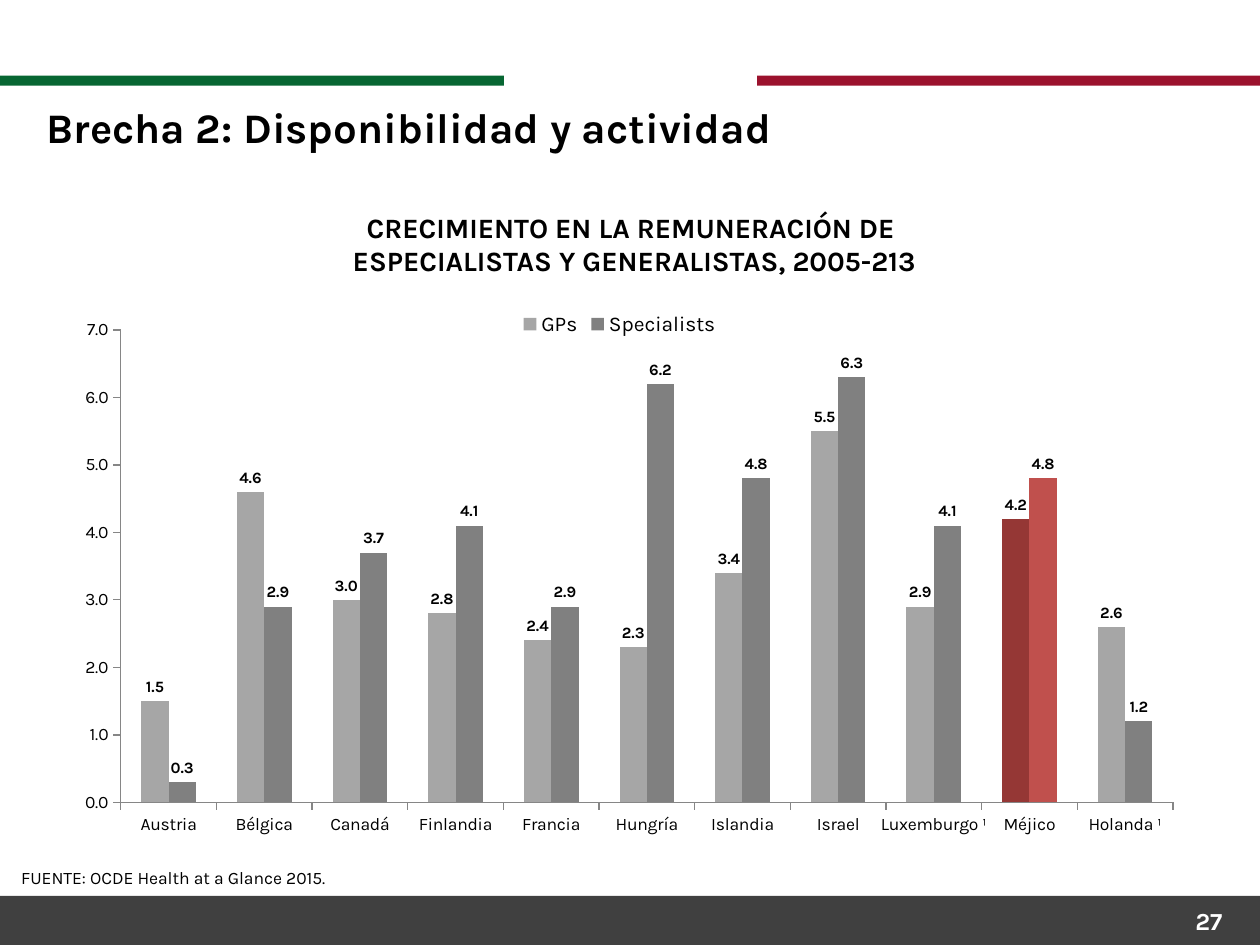
from pptx import Presentation
from pptx.chart.data import CategoryChartData as ChartData
from pptx.dml.color import RGBColor
from pptx.enum.chart import XL_CHART_TYPE as Kind, XL_LABEL_POSITION as Spot
from pptx.enum.chart import XL_LEGEND_POSITION as Side, XL_TICK_MARK as Tick
from pptx.enum.shapes import MSO_SHAPE as Shape
from pptx.enum.text import PP_ALIGN as Align
from pptx.oxml import parse_xml
from pptx.oxml.ns import nsdecls
from pptx.util import Inches, Pt


def color(code):
    return RGBColor.from_string(code)


def paint(fill, code):
    fill.solid()
    fill.fore_color.rgb = color(code)


def style(font, size, code="000000", bold=False):
    font.name, font.size, font.bold = Deck.face, Pt(size), bold
    font.color.rgb = color(code)


def layout(inner=False, **parts):
    """Manual layout, in fractions of the chart."""
    modes = '<c:layoutTarget val="inner"/>' if inner else ""
    modes += '<c:xMode val="edge"/><c:yMode val="edge"/>'
    sizes = "".join(f'<c:{key} val="{val}"/>' for key, val in parts.items())
    return parse_xml(f'<c:layout {nsdecls("c")}><c:manualLayout>'
                     f'{modes}{sizes}</c:manualLayout></c:layout>')


def place(node, item, after=None):
    """Put a layout in a chart part, in place of any old one."""
    for old in node.findall(item.tag):
        node.remove(old)
    if after is None:
        node.insert(0, item)
    else:
        after.addnext(item)


class Deck:
    face = "Karla"

    def __init__(self, wide, high):
        self.prs = Presentation()
        self.prs.slide_width, self.prs.slide_height = Inches(wide), Inches(high)
        self.slide = self.prs.slides.add_slide(self.prs.slide_layouts[6])
        paint(self.slide.background.fill, "FFFFFF")

    def bar(self, box, code):
        shape = self.slide.shapes.add_shape(Shape.RECTANGLE, *map(Inches, box))
        shape.shadow.inherit = False
        paint(shape.fill, code)
        shape.line.fill.background()

    def text(self, words, box, size, code="000000", bold=False,
             align=Align.LEFT, wrap=True):
        frame = self.slide.shapes.add_textbox(*map(Inches, box)).text_frame
        frame.word_wrap = wrap
        frame.text = words
        for par in frame.paragraphs:
            par.alignment = align
            for run in par.runs:
                style(run.font, size, code, bold)

    def chart(self, box, cats, series, mark):
        data = ChartData(number_format="0.0")
        data.categories = cats
        for name, vals, *_ in series:
            data.add_series(name, vals)
        chart = self.slide.shapes.add_chart(
            Kind.COLUMN_CLUSTERED, *map(Inches, box), data).chart
        chart.has_title = False
        style(chart.font, 10)

        # Columns, with one category picked out
        plot = chart.plots[0]
        plot.gap_width, plot.overlap, plot.vary_by_categories = 150, 0, False
        for ser, (_, _, code, accent) in zip(plot.series, series):
            ser.invert_if_negative = False
            paint(ser.format.fill, code)
            paint(ser.points[mark].format.fill, accent)
            labels = ser.data_labels
            labels.show_value = True
            labels.position = Spot.OUTSIDE_END
            labels.number_format = "0.0"
            labels.number_format_is_linked = False
            style(labels.font, 9, bold=True)

        # Axes
        for axis in (chart.category_axis, chart.value_axis):
            axis.has_major_gridlines = False
            axis.major_tick_mark, axis.minor_tick_mark = Tick.OUTSIDE, Tick.NONE
            axis.format.line.color.rgb = color("868686")
            axis.format.line.width = Pt(0.75)
            style(axis.tick_labels.font, 10)
        axis.minimum_scale, axis.maximum_scale, axis.major_unit = 0, 7, 1
        axis.tick_labels.number_format = "0.0"
        axis.tick_labels.number_format_is_linked = False

        # Legend and plot area
        chart.has_legend = True
        legend = chart.legend
        legend.position, legend.include_in_layout = Side.TOP, False
        style(legend.font, 12)
        root = chart.element.chart
        place(root.plotArea, layout(True, x=0.05, y=0.11, w=0.93, h=0.81))
        node = root.find("{*}legend")
        place(node, layout(x=0.4, y=0.07), node.find("{*}legendPos"))


def main():
    deck = Deck(10, 7.5)

    # Bands
    deck.bar((0, 7.11, 10.02, 0.39), "404040")
    for left, code in ((0, "076632"), (6.01, "9B122D")):
        deck.bar((left, 0.6, 4, 0.08), code)

    # Headings, source and page number
    deck.text("CRECIMIENTO EN LA REMUNERACIÓN DE \n"
              "ESPECIALISTAS Y GENERALISTAS, 2005-213",
              (0.35, 1.62, 9.37, 0.39), 16, bold=True,
              align=Align.CENTER, wrap=False)
    deck.text("FUENTE: OCDE Health at a Glance 2015.",
              (0.07, 6.83, 2.88, 0.44), 10, wrap=False)
    deck.text("Brecha 2: Disponibilidad y actividad",
              (0.27, 0.76, 9.53, 0.91), 24, bold=True)
    deck.text("27", (7.47, 7.14, 2.33, 0.4), 14, "FFFFFF", True, Align.RIGHT)

    # Pay growth by country
    cats = ["Austria", "Bélgica", "Canadá", "Finlandia", "Francia", "Hungría",
            "Islandia", "Israel", "Luxemburgo ¹", "Méjico", "Holanda ¹"]
    series = [
        ("GPs", (1.5, 4.6, 3, 2.8, 2.4, 2.3, 3.4, 5.5, 2.9, 4.2, 2.6),
         "A6A6A6", "953735"),
        ("Specialists", (0.3, 2.9, 3.7, 4.1, 2.9, 6.2, 4.8, 6.3, 4.1, 4.8, 1.2),
         "808080", "C0504D"),
    ]
    deck.chart((0.51, 2.11, 8.98, 4.63), cats, series, cats.index("Méjico"))

    deck.prs.save("out.pptx")


if __name__ == "__main__":
    main()
